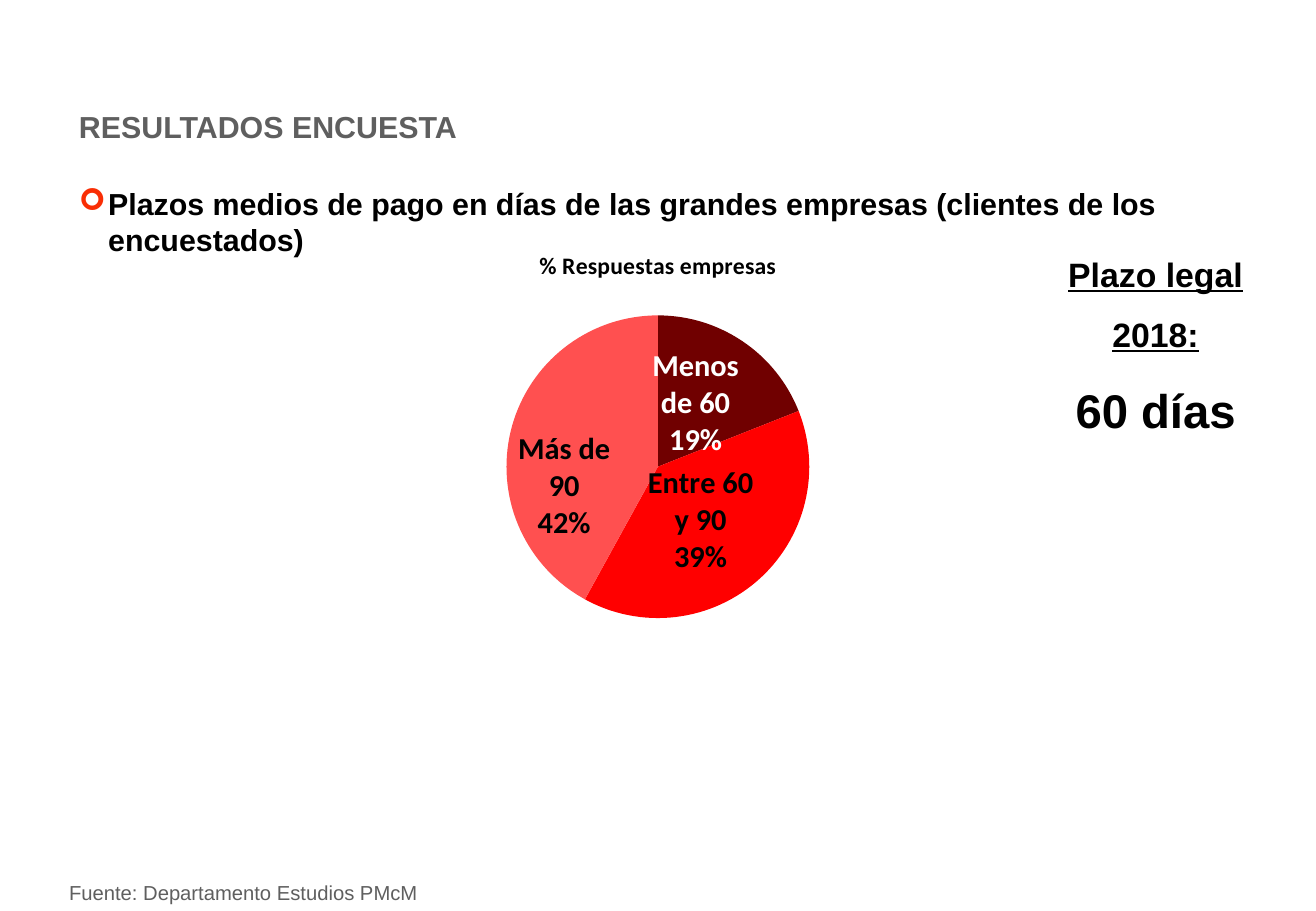
from lxml import etree
from pptx import Presentation
from pptx import util as u
from pptx.chart.data import CategoryChartData
from pptx.dml.color import RGBColor
from pptx.enum import chart as c
from pptx.enum import text as t
from pptx.oxml import parse_xml
from pptx.oxml.ns import nsdecls, qn

PX = 9144  # EMU in one px, 100 px to the inch
COLORS = {
    "black": "000000", "white": "FFFFFF", "gray": "5F5F5F", "bullet": "F92E05",
    "under_60": "700000", "from_60_to_90": "FF0000", "over_90": "FF5050",
}
TERMS = [
    ("Menos de 60", 0.19, "under_60"),
    ("Entre 60 y 90", 0.39, "from_60_to_90"),
    ("Más de 90", 0.42, "over_90"),
]


def px(*lengths):
    return [u.Emu(length * PX) for length in lengths]


def set_font(font, color="black", **values):
    font.color.rgb = RGBColor.from_string(COLORS[color])
    for name, value in {"name": "Arial", "bold": True, **values}.items():
        setattr(font, name, value)


def set_frame(frame, **values):
    defaults = {"word_wrap": True, "auto_size": t.MSO_AUTO_SIZE.SHAPE_TO_FIT_TEXT,
                "vertical_anchor": t.MSO_ANCHOR.TOP}
    for name, value in {**defaults, **values}.items():
        setattr(frame, name, value)


def place(shape, box):
    shape.left, shape.top, shape.width, shape.height = px(*box)


def add_title(slide, box):
    title = slide.shapes.title
    place(title, box)
    set_frame(title.text_frame)
    title.text_frame.text = "RESULTADOS ENCUESTA"
    paragraph = title.text_frame.paragraphs[0]
    paragraph.alignment = t.PP_ALIGN.LEFT
    set_font(paragraph.font, "gray", size=u.Pt(18))


def add_topic(slide, box):
    body = slide.placeholders[1]
    place(body, box)
    set_frame(body.text_frame)
    body.text_frame.text = ("Plazos medios de pago en días de las grandes empresas "
                            "(clientes de los encuestados)")
    paragraph = body.text_frame.paragraphs[0]
    paragraph.space_before = u.Pt(0)
    properties = paragraph._p.get_or_add_pPr()
    indent = 24 * PX
    properties.set("marL", str(indent))
    properties.set("indent", str(-indent))
    color = etree.SubElement(properties, qn("a:buClr"))
    etree.SubElement(color, qn("a:srgbClr"), val=COLORS["bullet"])
    etree.SubElement(properties, qn("a:buFont"), typeface="Wingdings")
    etree.SubElement(properties, qn("a:buChar"), char="➢")
    set_font(paragraph.font, size=u.Pt(18))


def add_legal_term(slide, box):
    frame = slide.shapes.add_textbox(*px(*box)).text_frame
    set_frame(frame)
    lines = [("Plazo legal", 20, True, 0), ("2018:", 20, True, 11.5), ("60 días", 28, False, 16)]
    frame.text = "\n".join(line[0] for line in lines)
    for paragraph, (_, size, underline, gap) in zip(frame.paragraphs, lines):
        paragraph.alignment = t.PP_ALIGN.CENTER
        paragraph.space_before = u.Pt(gap)
        set_font(paragraph.font, size=u.Pt(size), underline=underline)


def add_source(slide, box):
    frame = slide.shapes.add_textbox(*px(*box)).text_frame
    set_frame(frame, word_wrap=False, vertical_anchor=t.MSO_ANCHOR.MIDDLE)
    frame.text = "Fuente: Departamento Estudios PMcM"
    set_font(frame.paragraphs[0].font, "gray", size=u.Pt(12), bold=False)


def show_category_and_value(labels):
    """Shows both parts of a label, or of a set of labels, on separate lines."""
    labels.find(qn("c:showCatName")).set("val", "1")
    labels.find(qn("c:showPercent")).set("val", "0")
    separator = parse_xml(f"<c:separator {nsdecls('c')}>\n</c:separator>")
    last_flag = labels.find(qn("c:showBubbleSize"))
    if last_flag is None:
        last_flag = labels.find(qn("c:showPercent"))
    last_flag.addnext(separator)


def fix_pie_area(chart, x, y, w, h):
    """Sets the pie's box as fractions of the chart's box."""
    plot_area = chart._chartSpace.chart.plotArea
    for layout in plot_area.findall(qn("c:layout")):
        plot_area.remove(layout)
    layout = etree.Element(qn("c:layout"))
    manual = etree.SubElement(layout, qn("c:manualLayout"))
    values = {"layoutTarget": "inner", "xMode": "edge", "yMode": "edge",
              "x": x, "y": y, "w": w, "h": h}
    for name, value in values.items():
        etree.SubElement(manual, qn(f"c:{name}"), val=str(value))
    plot_area.insert(0, layout)


def add_terms_pie(slide, box):
    data = CategoryChartData(number_format="0%")
    data.categories = [name for name, _, _ in TERMS]
    data.add_series("% Respuestas empresas", [value for _, value, _ in TERMS])
    chart = slide.shapes.add_chart(c.XL_CHART_TYPE.PIE, *px(*box), data).chart
    chart.has_legend = False
    set_font(chart.font, name="Calibri", size=u.Pt(10), bold=False)
    chart.has_title = True
    chart.chart_title.include_in_layout = False
    chart.chart_title.text_frame.text = "% Respuestas empresas"
    set_font(chart.chart_title.text_frame.paragraphs[0].font, name="Calibri", size=u.Pt(14))
    fix_pie_area(chart, 0.35, 0.19, 0.3, 0.67)

    plot = chart.plots[0]
    plot.vary_by_categories = True
    series = plot.series[0]
    for index, (_, _, color) in enumerate(TERMS):
        fill = series.points[index].format.fill
        fill.solid()
        fill.fore_color.rgb = RGBColor.from_string(COLORS[color])

    labels = series.data_labels
    label_font = {"name": "Calibri", "size": u.Pt(18)}
    set_font(labels.font, **label_font)
    labels.number_format = "0%"
    labels.number_format_is_linked = False
    labels.position = c.XL_LABEL_POSITION.INSIDE_END
    labels.show_value = True
    show_category_and_value(labels._element)

    dark_label = series.points[0].data_label
    set_font(dark_label.font, "white", **label_font)
    dark_label.position = c.XL_LABEL_POSITION.INSIDE_END
    label = labels._element.find(qn("c:dLbl"))
    label.find(qn("c:idx")).addnext(
        parse_xml(f'<c:numFmt {nsdecls("c")} formatCode="0%" sourceLinked="0"/>'))
    show_category_and_value(label)


def main():
    presentation = Presentation()
    presentation.slide_width, presentation.slide_height = px(1083, 750)
    slide = presentation.slides.add_slide(presentation.slide_layouts[1])
    add_topic(slide, (55, 147, 921, 71))
    add_title(slide, (55, 84, 759, 40))
    add_legal_term(slide, (819, 204, 264, 164))
    add_source(slide, (47, 720, 310, 30))
    add_terms_pie(slide, (116, 189, 851, 372))
    presentation.save("out.pptx")


if __name__ == "__main__":
    main()
